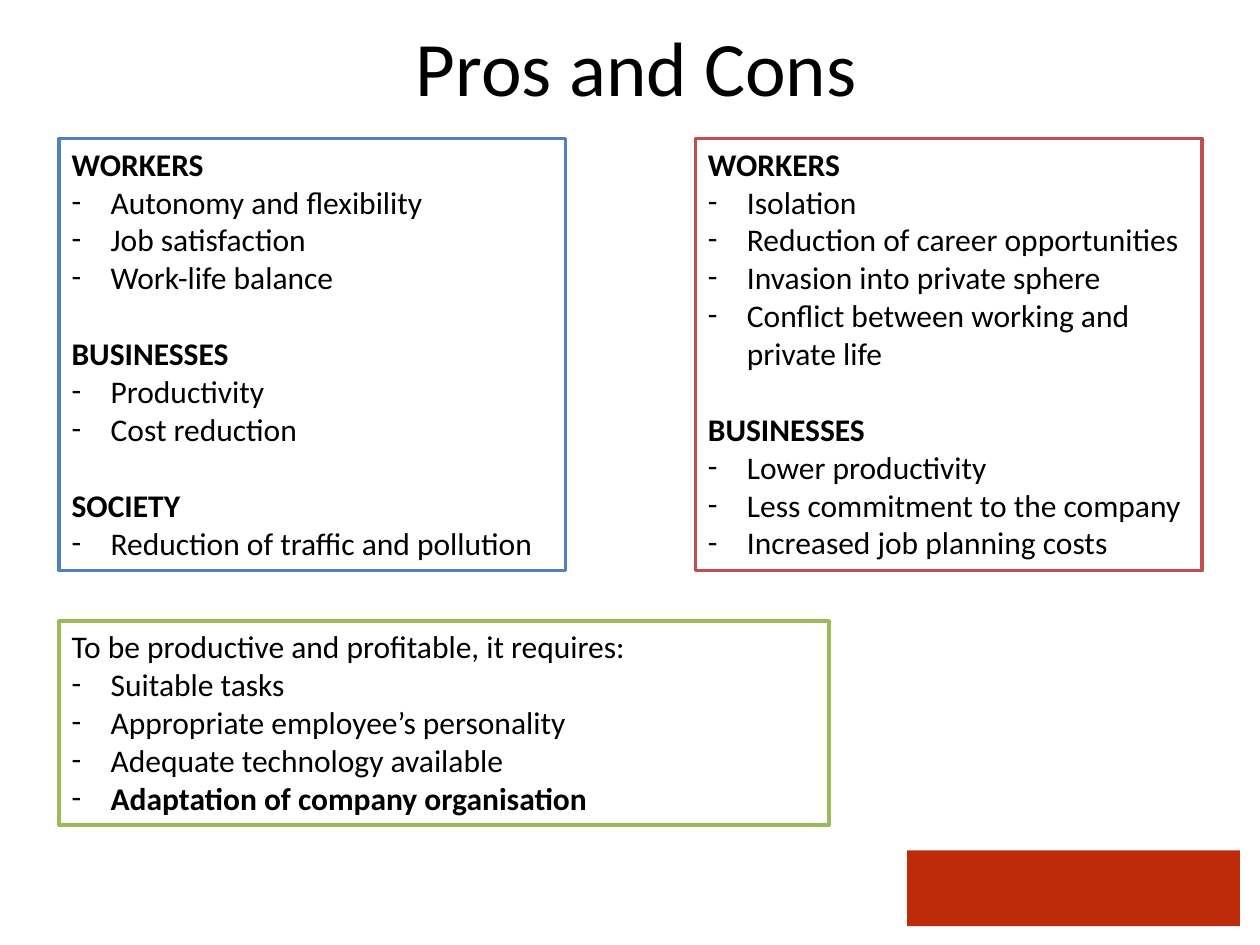
from dataclasses import dataclass

from lxml import etree
from pptx import Presentation
from pptx.dml.color import RGBColor
from pptx.enum.shapes import MSO_SHAPE
from pptx.enum.text import MSO_ANCHOR, PP_ALIGN
from pptx.oxml.ns import qn
from pptx.util import Inches, Pt

RECTANGLE = MSO_SHAPE.RECTANGLE
LEFT, CENTER = PP_ALIGN.LEFT, PP_ALIGN.CENTER
TOP, MIDDLE = MSO_ANCHOR.TOP, MSO_ANCHOR.MIDDLE

SLIDE_WIDTH, SLIDE_HEIGHT = Inches(10), Inches(7.5)
COLUMN, ROW = SLIDE_WIDTH / 100, SLIDE_HEIGHT / 75
FONT = "Calibri"
BODY_SIZE = 18
LINE_GAP = Pt(21.97)
BULLET_INDENT = Inches(0.31)
BLACK, WHITE, RED = "000000", "FFFFFF", "BD2B0B"


@dataclass(frozen=True)
class Area:
    """Position and size in grid columns and rows."""
    column: float
    row: float
    columns: float
    rows: float


@dataclass(frozen=True)
class Group:
    heading: str
    items: tuple[str, ...]
    bold_heading: bool = True
    bold_items: tuple[str, ...] = ()


@dataclass(frozen=True)
class Panel:
    area: Area
    border: str
    groups: tuple[Group, ...]


PANELS = (
    Panel(Area(4.7, 11, 40.2, 34.3), "4F81BD", (
        Group("WORKERS", ("Autonomy and flexibility", "Job satisfaction",
                          "Work-life balance")),
        Group("BUSINESSES", ("Productivity", "Cost reduction")),
        Group("SOCIETY", ("Reduction of traffic and pollution",)),
    )),
    Panel(Area(55.2, 11, 40.2, 34.3), "C0504D", (
        Group("WORKERS", ("Isolation", "Reduction of career opportunities",
                          "Invasion into private sphere",
                          "Conflict between working and private life")),
        Group("BUSINESSES", ("Lower productivity", "Less commitment to the company",
                             "Increased job planning costs")),
    )),
    Panel(Area(4.7, 49.3, 61.1, 16.2), "9BBB59", (
        Group("To be productive and profitable, it requires:",
              ("Suitable tasks", "Appropriate employee’s personality",
               "Adequate technology available", "Adaptation of company organisation"),
              bold_heading=False,
              bold_items=("Adaptation of company organisation",)),
    )),
)


def color(value: str) -> RGBColor:
    return RGBColor.from_string(value)


def place(shape, area: Area) -> None:
    shape.left, shape.top = round(area.column * COLUMN), round(area.row * ROW)
    shape.width, shape.height = round(area.columns * COLUMN), round(area.rows * ROW)


def add_rectangle(slide, area: Area, fill: str, border: str | None = None):
    shape = slide.shapes.add_shape(RECTANGLE, 0, 0, 0, 0)
    place(shape, area)
    shape.shadow.inherit = False
    shape.fill.solid()
    shape.fill.fore_color.rgb = color(fill)
    if border:
        shape.line.color.rgb = color(border)
        shape.line.width = Pt(2)
    else:
        shape.line.fill.background()
    return shape


def add_run(paragraph, text: str, size: float, bold: bool = False) -> None:
    run = paragraph.add_run()
    run.text = text
    run.font.name = FONT
    run.font.size = Pt(size)
    run.font.bold = bold
    run.font.color.rgb = color(BLACK)


def add_dash(paragraph) -> None:
    """Give the paragraph a hanging dash bullet."""
    properties = paragraph._p.get_or_add_pPr()
    properties.set("marL", str(BULLET_INDENT))
    properties.set("indent", str(-BULLET_INDENT))
    etree.SubElement(properties, qn("a:buFont")).set("typeface", FONT)
    etree.SubElement(properties, qn("a:buChar")).set("char", "-")


def add_panel(slide, panel: Panel) -> None:
    frame = add_rectangle(slide, panel.area, WHITE, panel.border).text_frame
    frame.word_wrap = True
    frame.vertical_anchor = TOP
    for number, group in enumerate(panel.groups):
        heading = frame.add_paragraph() if number else frame.paragraphs[0]
        heading.alignment = LEFT
        if number:
            heading.space_before = LINE_GAP
        add_run(heading, group.heading, BODY_SIZE, group.bold_heading)
        for item in group.items:
            paragraph = frame.add_paragraph()
            paragraph.alignment = LEFT
            add_dash(paragraph)
            add_run(paragraph, item, BODY_SIZE, item in group.bold_items)


def add_title(slide, text: str, area: Area) -> None:
    title = slide.shapes.title
    place(title, area)
    title.text_frame.vertical_anchor = MIDDLE
    paragraph = title.text_frame.paragraphs[0]
    paragraph.alignment = CENTER
    add_run(paragraph, text, 44)


def main() -> None:
    presentation = Presentation()
    presentation.slide_width, presentation.slide_height = SLIDE_WIDTH, SLIDE_HEIGHT
    slide = presentation.slides.add_slide(presentation.slide_layouts.get_by_name("Title Only"))
    add_rectangle(slide, Area(72, 67.5, 26.4, 6), RED)
    add_title(slide, "Pros and Cons ", Area(6.6, -0.2, 89.2, 10.8))
    for panel in PANELS:
        add_panel(slide, panel)
    presentation.save("out.pptx")


if __name__ == "__main__":
    main()
